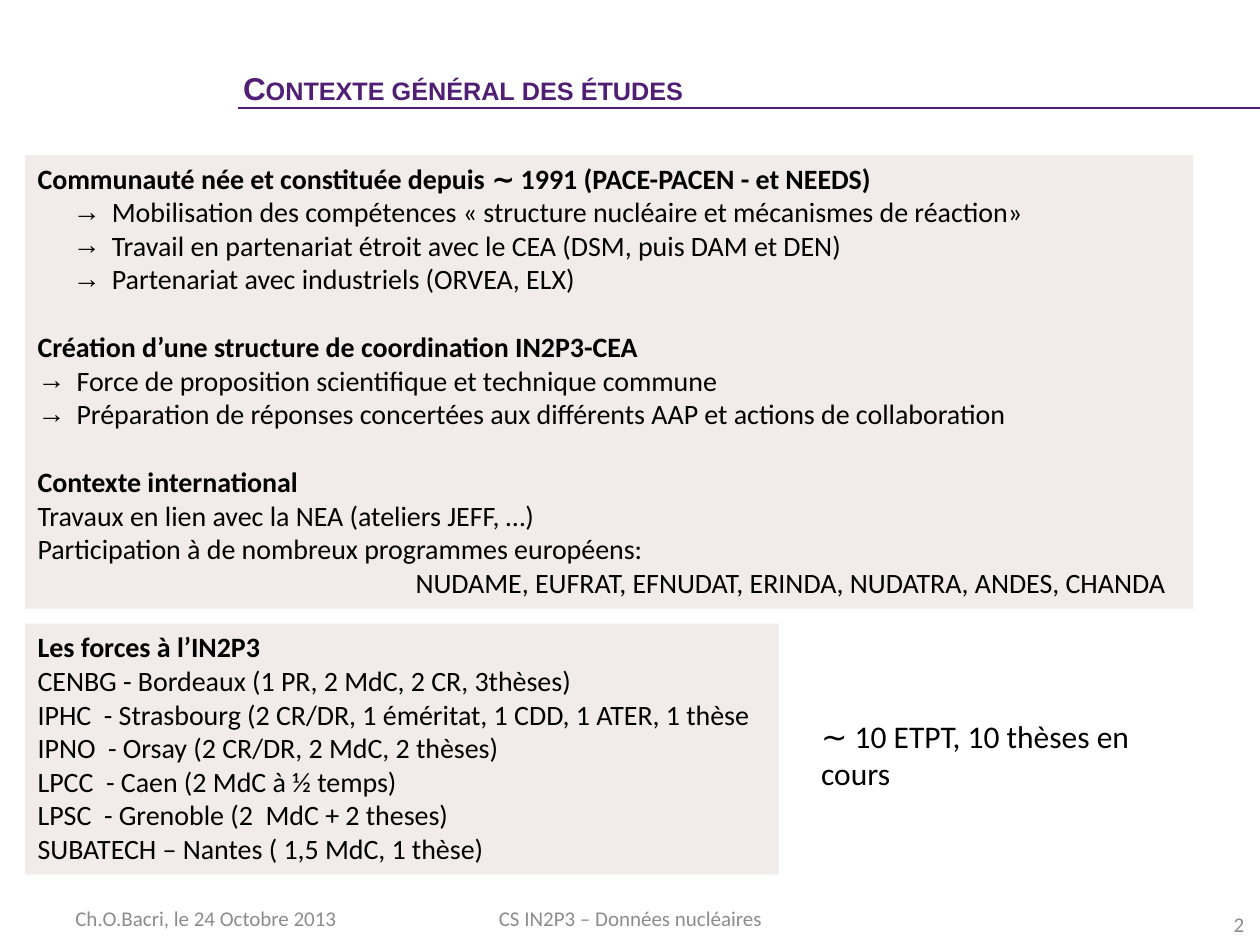
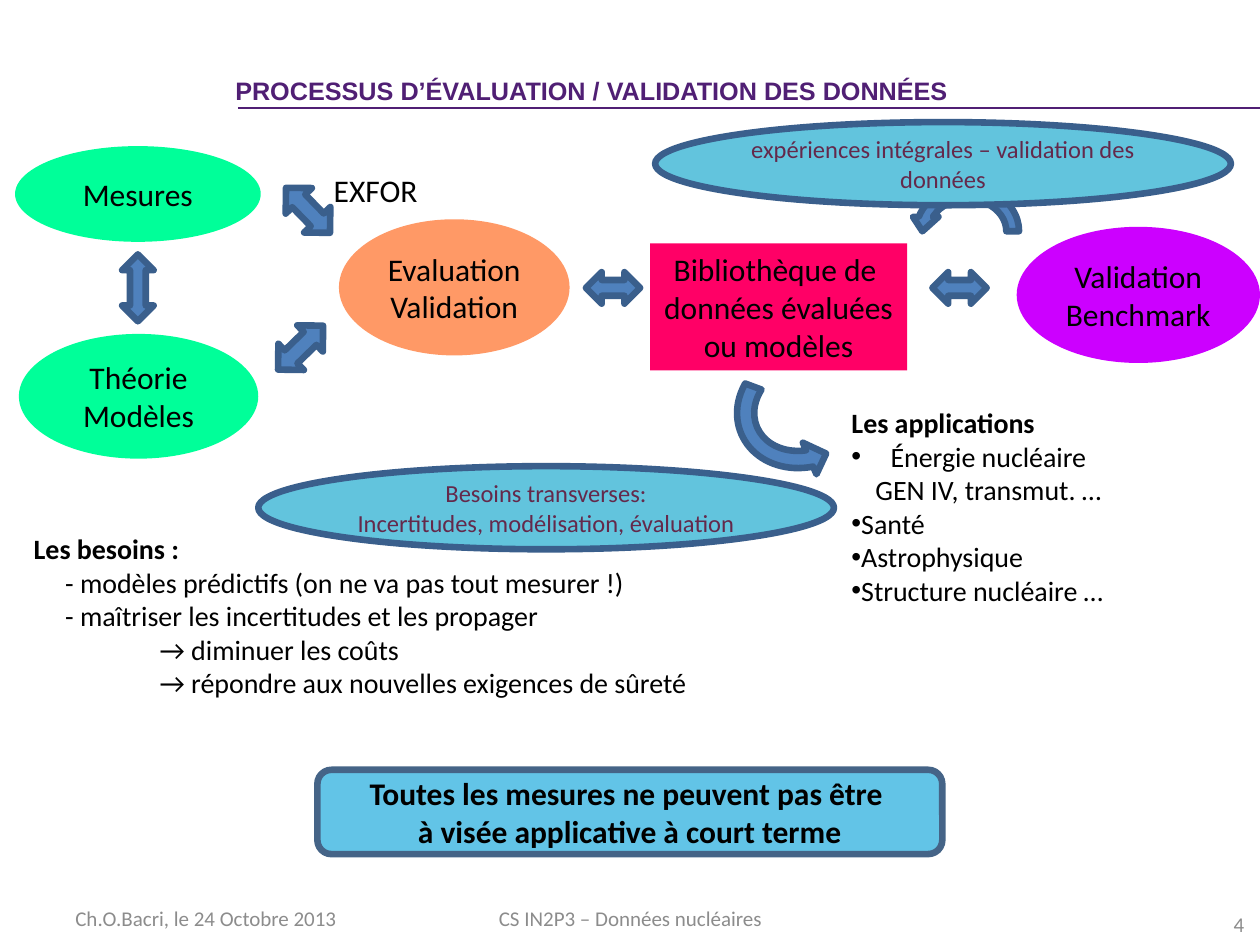
from lxml import etree
from pptx import Presentation
from pptx.dml.color import RGBColor
from pptx.enum.shapes import MSO_CONNECTOR, MSO_SHAPE
from pptx.enum.text import MSO_ANCHOR, PP_ALIGN
from pptx.oxml.ns import qn
from pptx.util import Pt

RECT, OVAL, ROUND = MSO_SHAPE.RECTANGLE, MSO_SHAPE.OVAL, MSO_SHAPE.ROUNDED_RECTANGLE
DOUBLE, CURVE = MSO_SHAPE.UP_DOWN_ARROW, MSO_SHAPE.CIRCULAR_ARROW
LINE = MSO_CONNECTOR.STRAIGHT
LEFT, MID, RIGHT = PP_ALIGN.LEFT, PP_ALIGN.CENTER, PP_ALIGN.RIGHT
TOP, CENTER = MSO_ANCHOR.TOP, MSO_ANCHOR.MIDDLE

PURPLE, BLACK, GREY, PLUM = "501F74", "000000", "8C8C8C", "64294B"
PANEL, GREEN, ORANGE, PINK, VIOLET = "F1EBEB", "00FF99", "FF9966", "FF0066", "CC00FF"
BLUE, NAVY, SKY, AZURE, SLATE = "4F81BD", "3A5F8C", "62C4DD", "62C4E7", "456487"
EDGE = 3.78
GAP = 19.5  # one line of 16 pt text
PAD = (7.2, 3.6)

# Line style: bold, left margin, first-line indent, bullet
STYLES = {
    "head": (True, 0, 0, None),
    "body": (False, 0, 0, None),
    "deep": (False, 42.5, -22.3, "→"),
    "arrow": (False, 22.3, -22.3, "→"),
    "far": (False, 216, 0, None),
    "dot": (False, 22.3, -22.3, "•"),
    "tight": (False, 0, -22.3, "•"),
    "sub": (False, 13.7, 0, None),
    "dash": (False, 18, 0, None),
    "tab": (False, 72, 0, None),
}

DATE = "Ch.O.Bacri, le 24 Octobre 2013"
EVENT = "CS IN2P3 – Données nucléaires"

CONTEXT = [
    ("head", "Communauté née et constituée depuis ∼ 1991 (PACE-PACEN - et NEEDS)"),
    ("deep", "Mobilisation des compétences « structure nucléaire et mécanismes de réaction»"),
    ("deep", "Travail en partenariat étroit avec le CEA (DSM, puis DAM et DEN)"),
    ("deep", "Partenariat avec industriels (ORVEA, ELX)"),
    ("head", "Création d’une structure de coordination IN2P3-CEA"),
    ("arrow", "Force de proposition scientifique et technique commune"),
    ("arrow", "Préparation de réponses concertées aux différents AAP et actions de collaboration"),
    ("head", "Contexte international"),
    ("body", "Travaux en lien avec la NEA (ateliers JEFF, …)"),
    ("body", "Participation à de nombreux programmes européens:"),
    ("far", "NUDAME, EUFRAT, EFNUDAT, ERINDA, NUDATRA, ANDES, CHANDA"),
]
FORCES = [
    ("head", "Les forces à l’IN2P3"),
    ("body", "CENBG - Bordeaux (1 PR, 2 MdC, 2 CR, 3thèses)"),
    ("body", "IPHC  - Strasbourg (2 CR/DR, 1 éméritat, 1 CDD, 1 ATER, 1 thèse"),
    ("body", "IPNO  - Orsay (2 CR/DR, 2 MdC, 2 thèses)"),
    ("body", "LPCC  - Caen (2 MdC à ½ temps)"),
    ("body", "LPSC  - Grenoble (2  MdC + 2 theses)"),
    ("body", "SUBATECH – Nantes ( 1,5 MdC, 1 thèse)"),
]
USES = [
    ("head", "Les applications"),
    ("dot", "Énergie nucléaire"),
    ("sub", "GEN IV, transmut. …"),
    ("tight", "Santé"),
    ("tight", "Astrophysique"),
    ("tight", "Structure nucléaire …"),
]
NEEDS = [
    ("head", "Les besoins :"),
    ("dash", "- modèles prédictifs (on ne va pas tout mesurer !)"),
    ("dash", "- maîtriser les incertitudes et les propager"),
    ("tab", "→ diminuer les coûts"),
    ("tab", "→ répondre aux nouvelles exigences de sûreté"),
]
MOTTO = [
    ("head", "Toutes les mesures ne peuvent pas être "),
    ("head", "à visée applicative à court terme"),
]

# Steps of the process: form, box, fill, padding, lines
STEPS = [
    (RECT, (371.5, 139, 146.9, 72.7), PINK, PAD,
     ["Bibliothèque de ", "données évaluées", "ou modèles"]),
    (OVAL, (581, 129.6, 139, 77.8), VIOLET, PAD, ["Validation", "Benchmark"]),
    (OVAL, (8.6, 83.5, 140.4, 54.7), GREEN, (0, 8.6), ["Mesures"]),
    (OVAL, (10.8, 190.8, 136.8, 71.3), GREEN, (0, 3.6), ["Théorie", "Modèles"]),
    (OVAL, (193.7, 125.3, 131.8, 77.8), ORANGE, PAD, ["Evaluation", "Validation"]),
]
# Double arrows: box, rotation
ARROWS = [
    ((341.3, 149, 18, 31), 90),
    ((539.3, 149, 18, 31), 90),
    ((69.8, 145.4, 18, 38.2), 0),
    ((165.6, 102.2, 20.9, 36), 315.7),
    ((161.3, 180.7, 20.9, 36), 45.7),
]
# Curved arrows: box, rotation, flip
CURVES = [
    ((519.8, 103, 66.2, 58.3), 0, "flipH", None),
    ((421.2, 187.2, 78.5, 90), 66.7, "flipV", (0.125, 11.423, 204.577, 135.64, 0.125)),
]
NOTES = [
    ((374.4, 69.8, 329, 47.5), ["expériences intégrales – validation des données"]),
    ((147.6, 266.4, 329, 47.5),
     ["Besoins transverses:", "Incertitudes, modélisation, évaluation"]),
]


def ink(code):
    return RGBColor.from_string(code)


def plain(texts):
    return [("body", text) for text in texts]


def shape(slide, form, box, fill, edge=None, turn=0):
    item = slide.shapes.add_shape(form, *map(Pt, box))
    item.shadow.inherit = False
    item.fill.solid()
    item.fill.fore_color.rgb = ink(fill)
    if edge:
        item.line.color.rgb = ink(edge)
        item.line.width = Pt(EDGE)
    else:
        item.line.fill.background()
    item.rotation = turn
    return item


def label(slide, box, lines, **look):
    """Add a text box and fill it."""
    item = slide.shapes.add_textbox(*map(Pt, box))
    return write(item, lines, **look)


def write(item, lines, size=16, color=BLACK, align=LEFT, anchor=TOP,
          pad=PAD, font="Calibri", gap=0):
    """Fill a shape with styled lines; gap goes before each later heading."""
    frame = item.text_frame
    frame.word_wrap = True
    frame.vertical_anchor = anchor
    frame.margin_left = frame.margin_right = Pt(pad[0])
    frame.margin_top = frame.margin_bottom = Pt(pad[1])
    for rank, (style, text) in enumerate(lines):
        bold, left, first, mark = STYLES[style]
        para = frame.add_paragraph() if rank else frame.paragraphs[0]
        props = para._p.get_or_add_pPr()
        props.set("marL", str(Pt(left)))
        props.set("indent", str(Pt(first)))
        if mark:
            etree.SubElement(props, qn("a:buFont")).set("typeface", "Arial")
            etree.SubElement(props, qn("a:buChar")).set("char", mark)
        para.alignment = align
        if gap and rank and style == "head":
            para.space_before = Pt(gap)
        run = para.add_run()
        run.text = text
        run.font.name = font
        run.font.size = Pt(size)
        run.font.bold = bold
        run.font.color.rgb = ink(color)
    return item


def start(deck, title, left, page):
    """Add a slide with its rule, title and footer."""
    slide = deck.slides.add_slide(deck.slide_layouts[6])
    rule = slide.shapes.add_connector(LINE, Pt(136), Pt(61.8), Pt(720), Pt(61.8))
    rule.line.color.rgb = ink(PURPLE)
    rule.line.width = Pt(1.5)
    etree.SubElement(rule._element.spPr, qn("a:effectLst"))
    head = label(slide, (left, 22.3, 520, 56.2), [("head", title)],
                 size=18, color=PURPLE, anchor=CENTER, font="Arial")
    run = head.text_frame.paragraphs[0].runs[0]
    run._r.get_or_add_rPr().set("cap", "small")
    foot = [
        ((36, 510.5, 167.8, 28.8), DATE, LEFT),
        ((246.2, 510.5, 228.2, 28.8), EVENT, MID),
        ((675.4, 517, 45.4, 22.3), f"{page} ", RIGHT),
    ]
    for box, text, align in foot:
        label(slide, box, plain([text]), size=12, color=GREY, align=align, anchor=CENTER)
    return slide


def context(deck):
    slide = start(deck, "Contexte général des études", 131.8, 2)
    panels = [
        ((14.4, 88.6, 667.4, 259.2), CONTEXT),
        ((14.4, 356.4, 430.6, 143.3), FORCES),
    ]
    for box, lines in panels:
        write(shape(slide, RECT, box, PANEL), lines, gap=GAP)
    label(slide, (462.2, 406, 230, 50), plain(["∼ 10 ETPT, 10 thèses en cours"]), size=18)


def process(deck):
    slide = start(deck, "processus d’évaluation / validation des données", 127.4, 4)
    for form, box, fill, pad, lines in STEPS:
        write(shape(slide, form, box, fill), plain(lines), size=18,
              align=MID, anchor=CENTER, pad=pad)
    for box, turn in ARROWS:
        shape(slide, DOUBLE, box, BLUE, NAVY, turn)
    for box, turn, flip, bends in CURVES:
        arrow = shape(slide, CURVE, box, BLUE, NAVY, turn)
        arrow._element.spPr.xfrm.set(flip, "1")
        for rank, bend in enumerate(bends or ()):
            arrow.adjustments[rank] = bend
    label(slide, (479.5, 228.2, 177, 124), USES)
    label(slide, (183.6, 94.3, 64, 28.8), plain(["EXFOR"]), size=18)
    label(slide, (12.2, 300.2, 393, 104.4), NEEDS)
    write(shape(slide, ROUND, (181.4, 439.9, 357.1, 48.2), AZURE, SLATE), MOTTO,
          size=18, align=MID, anchor=CENTER, pad=(7.2, 0))
    for box, lines in NOTES:
        write(shape(slide, OVAL, box, SKY, NAVY), plain(lines), size=14,
              color=PLUM, align=MID, anchor=CENTER, pad=(0, 0))


def main():
    deck = Presentation()
    deck.slide_width, deck.slide_height = Pt(720), Pt(540)
    context(deck)
    process(deck)
    deck.save("out.pptx")


if __name__ == "__main__":
    main()
